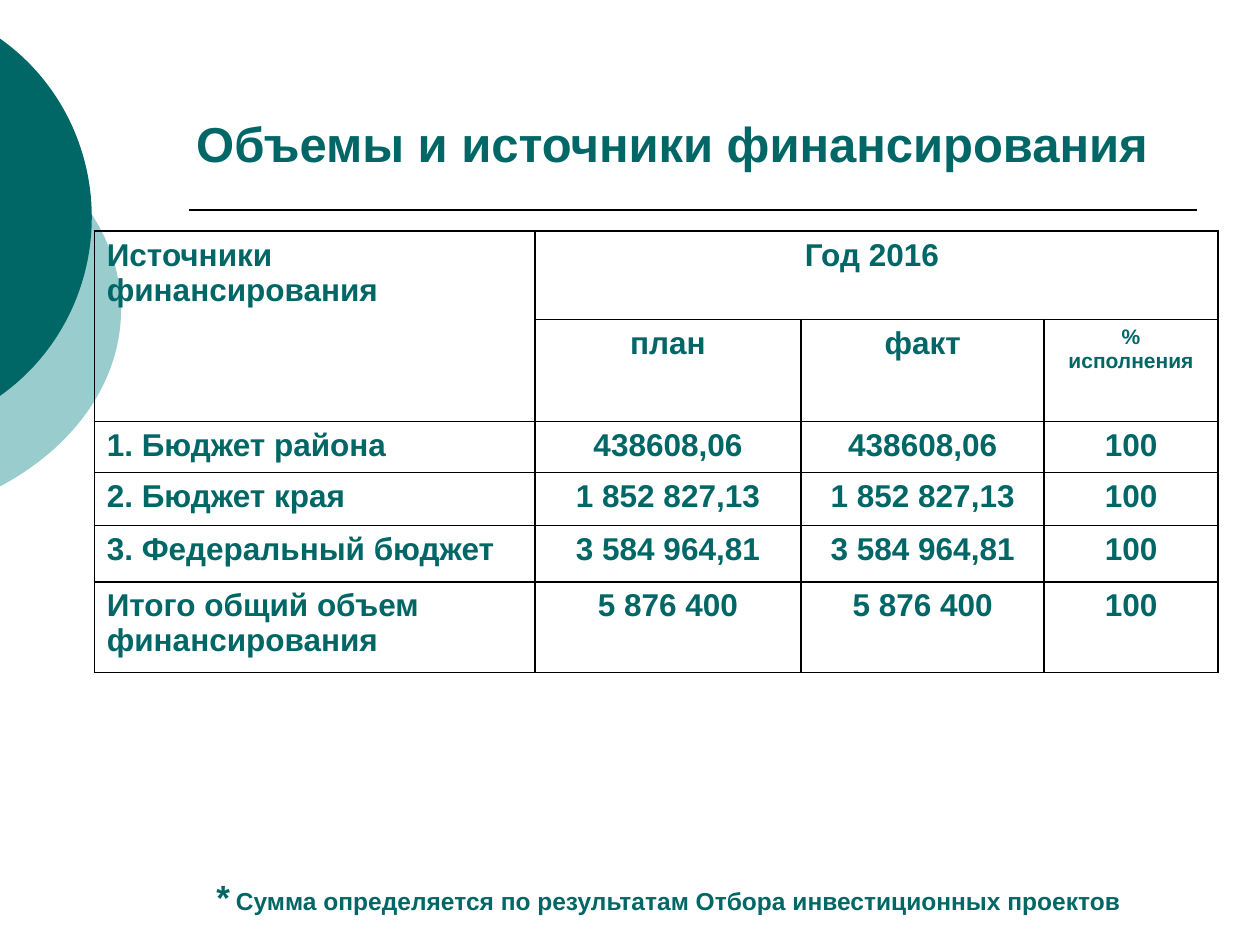
import pptx
import pptx.dml.color
import pptx.enum.shapes
import pptx.enum.text
import pptx.oxml
import pptx.oxml.ns
import pptx.util
from pptx.util import Cm

TEAL, PALE_TEAL, BLACK = "006666", "99CCCC", "000000"
CENTER = pptx.enum.text.PP_ALIGN.CENTER
LEFT = pptx.enum.text.PP_ALIGN.LEFT
HANGING = Cm(0.95)


def color(hex_code):
    return pptx.dml.color.RGBColor.from_string(hex_code)


class FinanceSlide:
    font_format = {"name": "Arial", "bold": True}
    frame_format = {"word_wrap": True, "vertical_anchor": pptx.enum.text.MSO_ANCHOR.BOTTOM}
    table_format = {"first_row": False, "horz_banding": False}

    def __init__(self, slide):
        self.slide = slide

    def apply(self, target, values):
        for key, value in values.items():
            setattr(target, key, value)

    def run(self, paragraph, text, size):
        run = paragraph.add_run()
        run.text = text
        self.apply(run.font, {**self.font_format, "size": pptx.util.Pt(size)})
        run.font.color.rgb = color(TEAL)

    def text(self, left, top, width, height, runs):
        box = self.slide.shapes.add_textbox(Cm(left), Cm(top), Cm(width), Cm(height))
        self.apply(box.text_frame, self.frame_format)
        paragraph = box.text_frame.paragraphs[0]
        paragraph.alignment = CENTER
        for wording, size in runs:
            self.run(paragraph, wording, size)

    def oval(self, left, top, width, height, fill):
        oval = self.slide.shapes.add_shape(
            pptx.enum.shapes.MSO_SHAPE.OVAL, Cm(left), Cm(top), Cm(width), Cm(height))
        oval.shadow.inherit = False
        oval.fill.solid()
        oval.fill.fore_color.rgb = color(fill)
        oval.line.fill.background()

    def rule(self, left, right, y):
        line = self.slide.shapes.add_connector(
            pptx.enum.shapes.MSO_CONNECTOR.STRAIGHT, Cm(left), Cm(y), Cm(right), Cm(y))
        line.line.color.rgb = color(BLACK)
        line.line.width = pptx.util.Pt(1)
        line._element.spPr.append(pptx.oxml.parse_xml(
            f'<a:effectLst {pptx.oxml.ns.nsdecls("a")}/>'))

    def cell_borders(self, cell):
        properties = cell._tc.get_or_add_tcPr()
        for position, side in enumerate(("lnL", "lnR", "lnT", "lnB")):
            properties.insert(position, pptx.oxml.parse_xml(
                f'<a:{side} {pptx.oxml.ns.nsdecls("a")} w="12700"><a:solidFill>'
                f'<a:srgbClr val="{BLACK}"/></a:solidFill></a:{side}>'))

    def table(self, left, top, widths, heights, rows, merges, small_cells):
        frame = self.slide.shapes.add_table(
            len(rows), len(widths), Cm(left), Cm(top), Cm(sum(widths)), Cm(sum(heights)))
        table = frame.table
        self.apply(table, self.table_format)
        for column, width in zip(table.columns, widths):
            column.width = Cm(width)
        for row, height in zip(table.rows, heights):
            row.height = Cm(height)
        for first, last in merges:
            table.cell(*first).merge(table.cell(*last))
        for r, row in enumerate(rows):
            for c, wording in enumerate(row):
                cell = table.cell(r, c)
                cell.fill.background()
                self.cell_borders(cell)
                if wording:
                    self.cell_text(cell, wording, CENTER if c else LEFT,
                                   12 if (r, c) in small_cells else 18)

    def cell_text(self, cell, wording, alignment, size):
        frame = cell.text_frame
        for index, line in enumerate(wording.split("\n")):
            paragraph = frame.add_paragraph() if index else frame.paragraphs[0]
            paragraph.alignment = alignment
            indents = paragraph._p.get_or_add_pPr()
            indents.set("marL", str(HANGING))
            indents.set("indent", str(-HANGING))
            self.run(paragraph, line, size)


def main():
    deck = pptx.Presentation()
    deck.slide_width, deck.slide_height = Cm(25.4), Cm(19.05)
    page = FinanceSlide(deck.slides.add_slide(deck.slide_layouts[6]))

    # Two ovals bleed off the left edge
    page.oval(-8.99, 1.9, 11.43, 8.69, PALE_TEAL)
    page.oval(-6.74, 0, 8.59, 8.76, TEAL)
    page.rule(3.81, 24.13, 4.24)
    page.text(2.97, 1.9, 21.16, 1.7, [("Объемы и источники финансирования", 28)])

    # Plan and actual amounts are equal for every source
    budgets = [("1. Бюджет района", "438608,06"),
               ("2. Бюджет края", "1 852 827,13"),
               ("3. Федеральный бюджет", "3 584 964,81"),
               ("Итого общий объем\nфинансирования", "5 876 400")]
    header = [("Источники\nфинансирования", "Год 2016 ", "", ""),
              ("", "план", "факт", "%\nисполнения")]
    page.table(1.9, 4.66,
               widths=[8.88, 5.37, 4.9, 3.5],
               heights=[1.78, 2.06, 1.03, 1.06, 1.14, 1.83],
               rows=header + [(source, amount, amount, "100") for source, amount in budgets],
               merges=[((0, 0), (1, 0)), ((0, 1), (0, 3))],
               small_cells={(1, 3)})

    page.text(2.97, 16.93, 21.16, 1.7, [
        ("*", 20), (" ", 12),
        ("Сумма определяется по результатам Отбора инвестиционных проектов ", 14)])
    deck.save("out.pptx")


if __name__ == "__main__":
    main()
